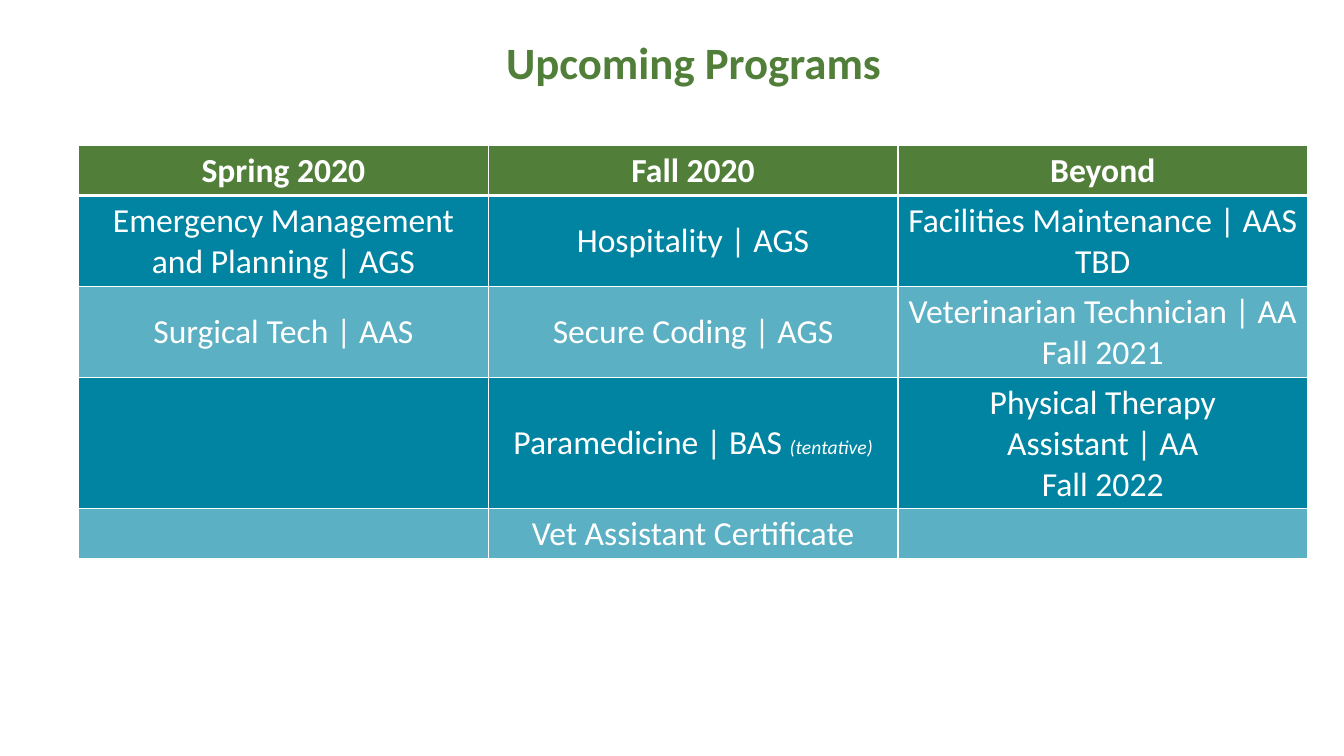
from lxml import etree
from pptx import Presentation
from pptx.dml.color import RGBColor
from pptx.enum.text import MSO_ANCHOR as Anchor, MSO_AUTO_SIZE as AutoSize, PP_ALIGN as Align
from pptx.oxml.ns import qn
from pptx.util import Inches, Pt

GREEN, TEAL, WHITE = "517F39", "0084A2", "FFFFFF"
FONT = "Calibri"
TENTATIVE = "(tentative)"
TINT_ALPHA = 64
ROW_HEIGHTS = [0.49, 0.9, 0.9, 1.3, 0.5]
PROGRAMS = [
    [["Spring 2020"], ["Fall 2020"], ["Beyond"]],
    [["Emergency Management\nand Planning | AGS"], ["Hospitality | AGS"],
     ["Facilities Maintenance | AAS", "TBD"]],
    [["Surgical Tech | AAS"], ["Secure Coding | AGS"],
     ["Veterinarian Technician | AA", "Fall 2021"]],
    [[], ["Paramedicine | BAS " + TENTATIVE],
     ["Physical Therapy\nAssistant | AA", "Fall 2022"]],
    [[], ["Vet Assistant Certificate"], []],
]


def color(value):
    return RGBColor.from_string(value)


def add_run(paragraph, text, size, value, bold=False, italic=False):
    run = paragraph.add_run()
    run.text = text
    font = run.font
    font.name, font.size, font.bold, font.italic = FONT, Pt(size), bold, italic
    font.color.rgb = color(value)


def add_title(slide, left, top, width, height):
    title = slide.shapes.title
    title.left, title.top = Inches(left), Inches(top)
    title.width, title.height = Inches(width), Inches(height)
    frame = title.text_frame
    frame.word_wrap = True
    frame.auto_size = AutoSize.SHAPE_TO_FIT_TEXT
    frame.vertical_anchor = Anchor.MIDDLE
    paragraph = frame.paragraphs[0]
    paragraph.alignment = Align.CENTER
    add_run(paragraph, "Upcoming Programs", 32, GREEN, bold=True)


def set_borders(cell, top, bottom):
    properties = cell._tc.get_or_add_tcPr()
    for side, width in (("L", 1), ("R", 1), ("T", top), ("B", bottom)):
        line = etree.SubElement(properties, qn(f"a:ln{side}"), w=str(Pt(width)))
        fill = etree.SubElement(line, qn("a:solidFill"))
        etree.SubElement(fill, qn("a:srgbClr"), val=WHITE)


def fill_cell(cell, value, alpha):
    cell.fill.solid()
    cell.fill.fore_color.rgb = color(value)
    if alpha < 100:
        properties = cell._tc.get_or_add_tcPr()
        fill_color = properties.find(qn("a:solidFill")).find(qn("a:srgbClr"))
        etree.SubElement(fill_color, qn("a:alpha"), val=str(alpha * 1000))


def write_cell(cell, paragraphs, bold):
    cell.vertical_anchor = Anchor.MIDDLE
    frame = cell.text_frame
    for index, text in enumerate(paragraphs):
        paragraph = frame.add_paragraph() if index else frame.paragraphs[0]
        paragraph.alignment = Align.CENTER
        main, note, _ = text.partition(TENTATIVE)
        for number, line in enumerate(main.split("\n")):
            if number:
                paragraph.add_line_break()
            add_run(paragraph, line, 24, WHITE, bold=bold)
        if note:
            add_run(paragraph, note, 14, WHITE, italic=True)


def add_programs(slide, left, top, width):
    frame = slide.shapes.add_table(
        len(PROGRAMS), len(PROGRAMS[0]), Inches(left), Inches(top),
        Inches(width), Inches(sum(ROW_HEIGHTS)))
    table = frame.table
    for row_index, row in enumerate(PROGRAMS):
        table.rows[row_index].height = Inches(ROW_HEIGHTS[row_index])
        header = row_index == 0
        alpha = TINT_ALPHA if row_index and row_index % 2 == 0 else 100
        for column_index, paragraphs in enumerate(row):
            cell = table.cell(row_index, column_index)
            set_borders(cell, 3 if row_index == 1 else 1, 3 if header else 1)
            fill_cell(cell, GREEN if header else TEAL, alpha)
            write_cell(cell, paragraphs, header)


def main():
    presentation = Presentation()
    presentation.slide_width, presentation.slide_height = Inches(13.33), Inches(7.5)
    slide = presentation.slides.add_slide(presentation.slide_layouts[5])
    add_title(slide, 0.61, 0.29, 12.54, 0.64)
    add_programs(slide, 0.78, 1.44, 12.19)
    presentation.save("out.pptx")


if __name__ == "__main__":
    main()
